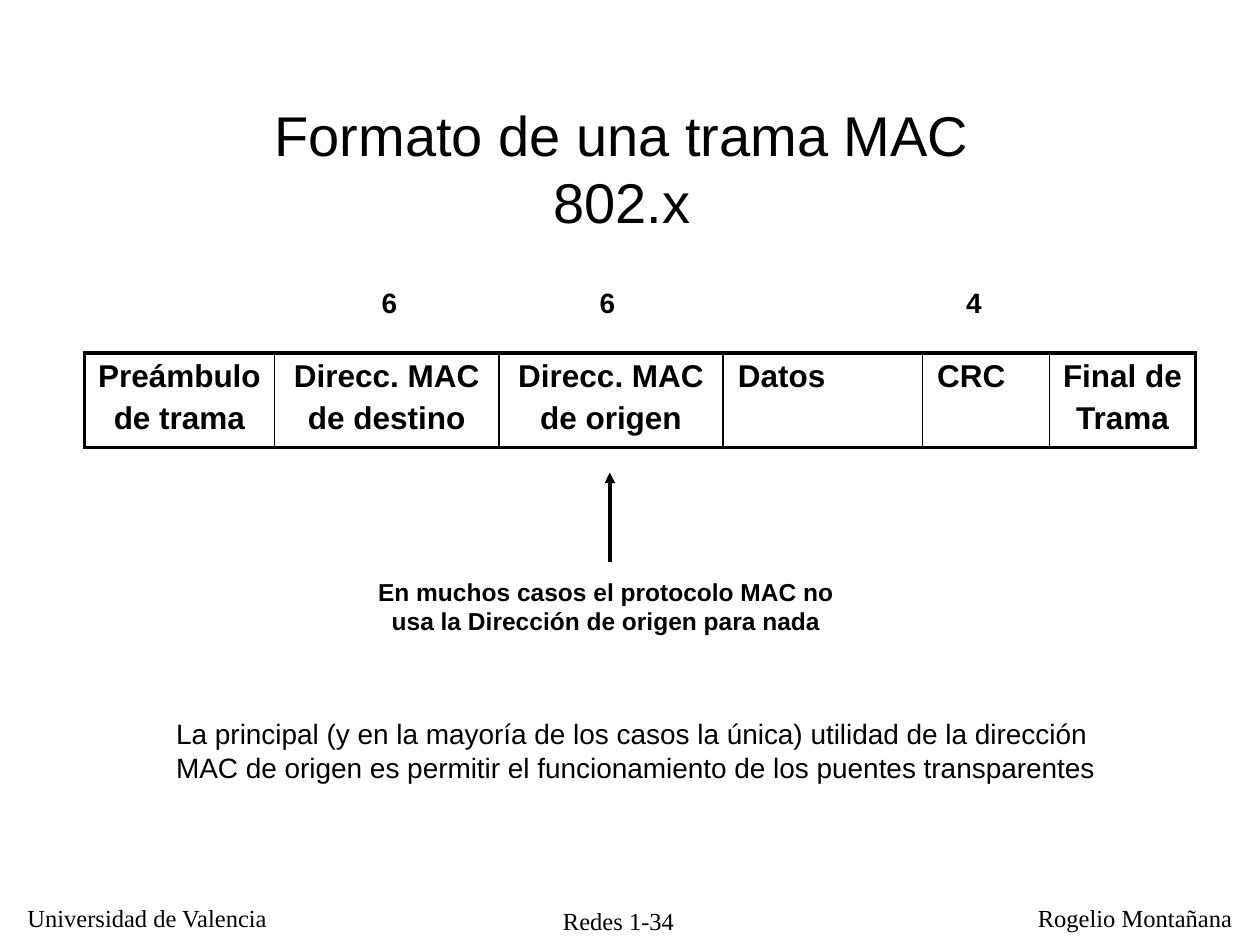
from lxml import etree
from pptx import Presentation
from pptx import util as u
from pptx.dml.color import RGBColor
from pptx.enum import shapes, text
from pptx.oxml.ns import qn

Pt = u.Pt
BLACK, WHITE = "000000", "FFFFFF"
LEFT, CENTER = text.PP_ALIGN.LEFT, text.PP_ALIGN.CENTER
SERIF = dict(size=14, font="Times New Roman", wrap=False)

# Content: frame fields as (lines, column width, alignment)
FIELDS = [
    (["Preámbulo", "de trama"], 108.7, CENTER),
    (["Direcc. MAC", "de destino"], 128.2, CENTER),
    (["Direcc. MAC", "de origen"], 128.2, CENTER),
    (["Datos"], 113.8, LEFT),
    (["CRC"], 72.7, LEFT),
    (["Final de", "Trama"], 83.5, CENTER),
]
TABLE_LEFT, TABLE_TOP, ROW_HEIGHT = 48.2, 201.6, 54
BYTE_COUNTS = [("6", 211), ("6", 335.5), ("4", 545)]  # text, left

# Text boxes as (text, (left, top, width, height), format)
TEXTS = [
    ("Redes 1-34", (306.7, 514, 93.6, 21.6), dict(SERIF, align=CENTER)),
    ("Universidad de Valencia", (8.6, 512.6, 153.4, 23.8), SERIF),
    ("Rogelio Montañana", (586, 512.6, 125.3, 23.8), SERIF),
    ("Formato de una trama MAC 802.x", (106.6, 54, 497.5, 81),
     dict(size=32, align=CENTER, margin=14)),
    ("En muchos casos el protocolo MAC no usa la Dirección de origen para nada",
     (206.6, 326.2, 279.4, 41), dict(size=14, bold=True, align=CENTER)),
    ("La principal (y en la mayoría de los casos la única) utilidad de la dirección "
     "MAC de origen es permitir el funcionamiento de los puentes transparentes",
     (93.6, 406, 557.3, 46), dict(size=16)),
]
ARROW = (348.5, 321, 348.5, 270)


def color(value):
    return RGBColor.from_string(value)


def write(frame, lines, size=16, font="Arial", bold=False, align=LEFT,
          wrap=True, margin=7.2, space=0):
    frame.word_wrap = wrap
    frame.margin_left = frame.margin_right = Pt(margin)
    for index, line in enumerate(lines):
        paragraph = frame.add_paragraph() if index else frame.paragraphs[0]
        paragraph.text = line
        paragraph.alignment = align
        if index:
            paragraph.space_before = Pt(space)
        paragraph.font.size = Pt(size)
        paragraph.font.name = font
        paragraph.font.bold = bold
        paragraph.font.color.rgb = color(BLACK)


def add_text(slide, content, box, **style):
    shape = slide.shapes.add_textbox(*map(Pt, box))
    write(shape.text_frame, [content], **style)


def set_borders(cell, widths):
    properties = cell._tc.get_or_add_tcPr()
    for index, (side, width) in enumerate(widths.items()):
        line = etree.Element(qn(f"a:ln{side}"), w=str(Pt(width)))
        fill = etree.SubElement(line, qn("a:solidFill"))
        etree.SubElement(fill, qn("a:srgbClr"), val=BLACK)
        properties.insert(index, line)


def add_frame_table(slide):
    total = sum(width for _, width, _ in FIELDS)
    box = (TABLE_LEFT, TABLE_TOP, total, ROW_HEIGHT)
    table = slide.shapes.add_table(1, len(FIELDS), *map(Pt, box)).table
    table.first_row = table.horz_banding = False
    last = len(FIELDS) - 1
    for index, (lines, width, align) in enumerate(FIELDS):
        table.columns[index].width = Pt(width)
        cell = table.cell(0, index)
        cell.fill.background()
        write(cell.text_frame, lines, size=18, bold=True, align=align, space=3.6)
        cell.margin_left = cell.margin_right = Pt(8.5 if align == LEFT else 3.6)
        set_borders(cell, {"L": 2.25 if index == 0 else 1,
                           "R": 2.25 if index == last else 1,
                           "T": 2.25, "B": 2.25})


def add_arrow(slide):
    arrow = slide.shapes.add_connector(shapes.MSO_CONNECTOR.STRAIGHT, *map(Pt, ARROW))
    arrow.line.color.rgb = color(BLACK)
    arrow.line.width = Pt(2)
    etree.SubElement(arrow.line._get_or_add_ln(), qn("a:tailEnd"), type="triangle")
    etree.SubElement(arrow._element.spPr, qn("a:effectLst"))


def main():
    presentation = Presentation()
    presentation.slide_width, presentation.slide_height = Pt(720), Pt(540)
    slide = presentation.slides.add_slide(presentation.slide_layouts[6])
    slide.background.fill.solid()
    slide.background.fill.fore_color.rgb = color(WHITE)

    # Footer, title and remarks
    for content, box, style in TEXTS:
        add_text(slide, content, box, **style)

    # Frame layout with the byte counts above it
    add_frame_table(slide)
    for count, left in BYTE_COUNTS:
        add_text(slide, count, (left, 159.8, 23, 26.6), bold=True, wrap=False)

    # Pointer to the source address
    add_arrow(slide)
    presentation.save("out.pptx")


if __name__ == "__main__":
    main()
